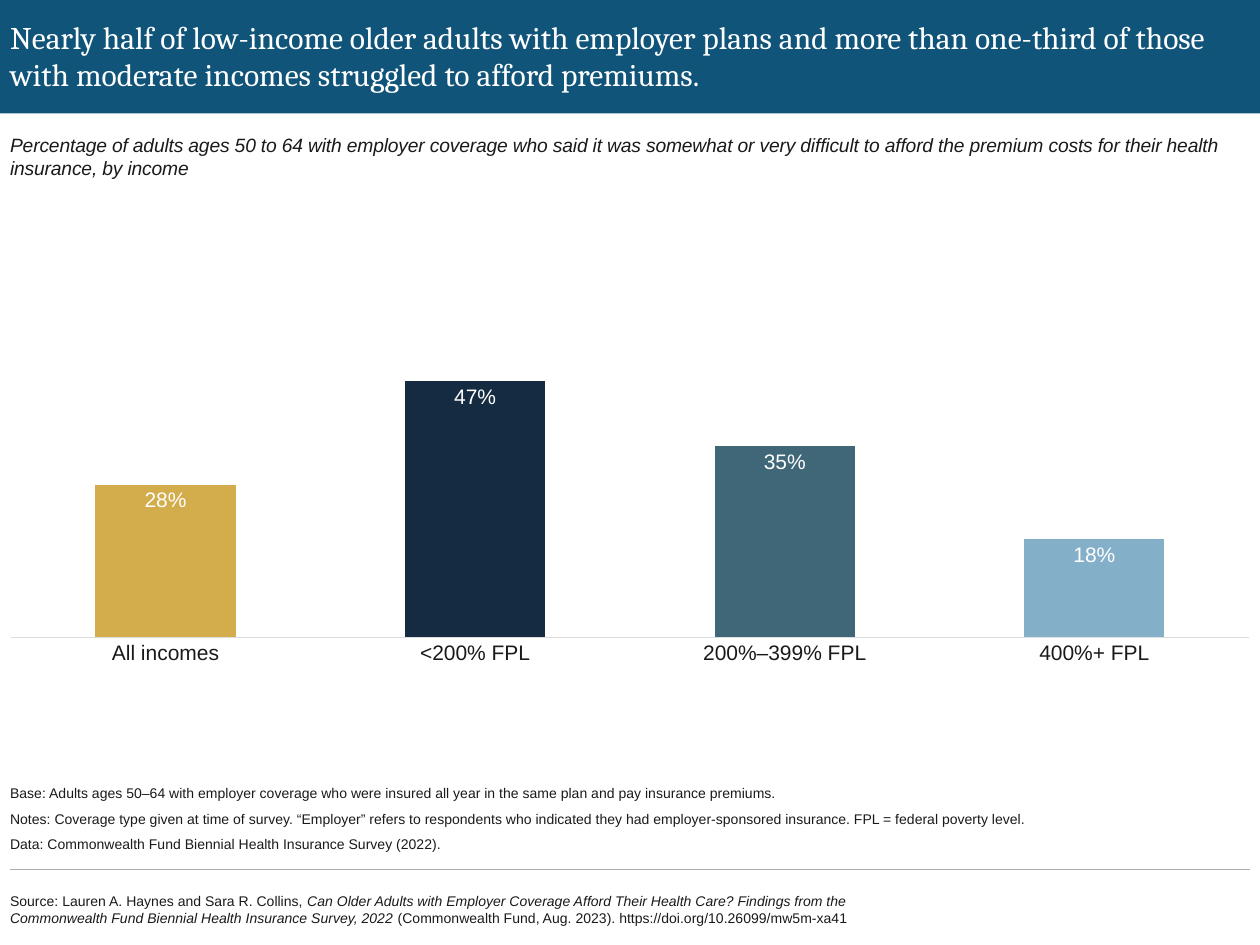
from typing import NamedTuple

from lxml import etree
from pptx import Presentation
from pptx.chart.data import CategoryChartData
from pptx.dml.color import RGBColor
from pptx.enum.chart import XL_CHART_TYPE, XL_LABEL_POSITION, XL_TICK_MARK
from pptx.enum.shapes import MSO_CONNECTOR, MSO_SHAPE
from pptx.enum.text import MSO_ANCHOR, MSO_AUTO_SIZE, PP_ALIGN
from pptx.oxml import parse_xml
from pptx.oxml.ns import nsdecls, qn
from pptx.util import Inches, Pt

COLUMN = XL_CHART_TYPE.COLUMN_CLUSTERED
INSIDE_END = XL_LABEL_POSITION.INSIDE_END
NO_TICK = XL_TICK_MARK.NONE
TOP, MIDDLE, BOTTOM = MSO_ANCHOR.TOP, MSO_ANCHOR.MIDDLE, MSO_ANCHOR.BOTTOM

BLUE = RGBColor(0x11, 0x54, 0x79)
WHITE = RGBColor(0xFF, 0xFF, 0xFF)
INK = RGBColor(0x1A, 0x1A, 0x1A)
RULE_GREY = RGBColor(0xAB, 0xAB, 0xAB)
AXIS_GREY = RGBColor(0xDD, 0xDD, 0xDD)
SANS, SERIF = "Arial", "Cambria"
LEFT, WIDTH = Inches(0.08), Inches(9.84)


class Bar(NamedTuple):
    income: str
    share: float
    color: RGBColor


BARS = [
    Bar("All incomes", 0.28, RGBColor(0xD3, 0xAC, 0x4C)),
    Bar("<200% FPL", 0.47, RGBColor(0x14, 0x2B, 0x41)),
    Bar("200%–399% FPL", 0.35, RGBColor(0x3F, 0x67, 0x77)),
    Bar("400%+ FPL", 0.18, RGBColor(0x83, 0xB0, 0xC8)),
]
TITLE = ("Nearly half of low-income older adults with employer plans and more than "
         "one-third of those with moderate incomes struggled to afford premiums.")
SUBTITLE = ("Percentage of adults ages 50 to 64 with employer coverage who said it was somewhat "
            "or very difficult to afford the premium costs for their health insurance, by income")
NOTES = [
    "Base: Adults ages 50–64 with employer coverage who were insured all year in the same plan "
    "and pay insurance premiums.",
    "Notes: Coverage type given at time of survey. “Employer” refers to respondents who indicated "
    "they had employer-sponsored insurance. FPL = federal poverty level.",
    "Data: Commonwealth Fund Biennial Health Insurance Survey (2022).",
]


def set_font(font, name: str, size: float, color: RGBColor, italic: bool | None = None) -> None:
    font.name, font.size, font.bold, font.italic = name, Pt(size), False, italic
    font.color.rgb = color


def set_frame(sp, top: float, height: float, anchor, width=WIDTH):
    """Place a text shape at the left margin and clear its insets."""
    sp.left, sp.top, sp.width, sp.height = LEFT, Inches(top), width, Inches(height)
    tf = sp.text_frame
    tf.margin_left = tf.margin_top = tf.margin_right = tf.margin_bottom = 0
    tf.word_wrap, tf.auto_size, tf.vertical_anchor = True, MSO_AUTO_SIZE.NONE, anchor
    return tf


def fill_paragraphs(tf, texts: list[str], name: str, size: float, color: RGBColor,
                    italic: bool | None = None, after: float = 0, spacing: float = 1.0) -> None:
    tf.text = "\n".join(texts)
    for p in tf.paragraphs:
        p.alignment = PP_ALIGN.LEFT
        p.space_before, p.space_after, p.line_spacing = Pt(0), Pt(after), spacing
        set_font(p.font, name, size, color, italic)


def add_band(s) -> None:
    sp = s.shapes.add_shape(MSO_SHAPE.RECTANGLE, 0, 0, Inches(10), Inches(0.9))
    sp.shadow.inherit = False
    sp.fill.solid()
    sp.fill.fore_color.rgb = BLUE
    sp.line.fill.background()
    s.shapes.element.insert(2, sp.element)  # behind the title


def add_rule(s) -> None:
    y = Inches(6.9)
    line = s.shapes.add_connector(MSO_CONNECTOR.STRAIGHT, LEFT, y, LEFT + WIDTH, y)
    line.line.color.rgb, line.line.width = RULE_GREY, Pt(0.75)
    etree.SubElement(line.element.spPr, qn("a:effectLst"))


def add_source(s) -> None:
    tf = set_frame(s.shapes.add_textbox(0, 0, 0, 0), 6.99, 0.46, MIDDLE, Inches(7.8))
    p = tf.paragraphs[0]
    set_font(p.font, SANS, 8, INK)
    p.add_run().text = "Source: Lauren A. Haynes and Sara R. Collins, "
    first, second = ("Can Older Adults with Employer Coverage Afford Their Health Care? Findings from the ",
                     "Commonwealth Fund Biennial Health Insurance Survey, 2022")
    for text in (first, second):
        if text is second:
            p.add_line_break()
        r = p.add_run()
        r.text, r.font.italic = text, True
    p.add_run().text = " (Commonwealth Fund, Aug. 2023). https://doi.org/10.26099/mw5m-xa41"


def add_bar_chart(s, bars: list[Bar]) -> None:
    data = CategoryChartData(number_format="0%")
    data.categories = [bar.income for bar in bars]
    data.add_series("Series 1", [bar.share for bar in bars])
    chart = s.shapes.add_chart(COLUMN, LEFT, Inches(1.38), WIDTH, Inches(4), data).chart
    chart.has_legend = chart.has_title = False
    set_font(chart.font, SANS, 10, INK)

    # Axes
    axis = chart.category_axis
    axis.major_tick_mark = axis.minor_tick_mark = NO_TICK
    set_font(axis.tick_labels.font, SANS, 12, INK)
    axis.format.line.color.rgb, axis.format.line.width = AXIS_GREY, Pt(0.75)
    values = chart.value_axis
    values.minimum_scale, values.maximum_scale = 0, 0.85
    values.has_major_gridlines = values.visible = False

    # Bars and their labels
    plot = chart.plots[0]
    plot.gap_width, plot.vary_by_categories = 121, False
    series = plot.series[0]
    series.format.fill.solid()
    series.format.fill.fore_color.rgb = BLUE
    for i, bar in enumerate(bars):
        fill = series.points[i].format.fill
        fill.solid()
        fill.fore_color.rgb = bar.color
    labels = series.data_labels
    labels.show_value, labels.position = True, INSIDE_END
    labels.number_format, labels.number_format_is_linked = "0%", False
    set_font(labels.font, SANS, 12, WHITE)

    # Plot area spans the full chart width
    area = chart.element.find(".//" + qn("c:plotArea"))
    for old in area.findall(qn("c:layout")):
        area.remove(old)
    area.insert(0, parse_xml(
        f'<c:layout {nsdecls("c")}><c:manualLayout><c:layoutTarget val="inner"/>'
        '<c:xMode val="edge"/><c:yMode val="edge"/><c:x val="0"/><c:y val="0"/>'
        '<c:w val="1"/><c:h val="0.92"/></c:manualLayout></c:layout>'))


def main() -> None:
    prs = Presentation()
    prs.slide_width, prs.slide_height = Inches(10), Inches(7.5)
    s = prs.slides.add_slide(prs.slide_layouts.get_by_name("Comparison"))
    holders = {ph.placeholder_format.idx: ph for ph in s.placeholders}
    title, subtitle, notes = holders[0], holders[1], holders[3]
    for idx in (2, 4):  # unused content placeholders
        s.shapes.element.remove(holders[idx].element)

    # Heading
    add_band(s)
    fill_paragraphs(set_frame(title, -0.01, 0.9, MIDDLE), [TITLE], SERIF, 18, WHITE)
    tf = set_frame(subtitle, 1.06, 0.32, TOP)
    fill_paragraphs(tf, [SUBTITLE], SANS, 11, INK, italic=True)
    tf.paragraphs[0].runs[0].font._element.set("spc", "-10")

    add_bar_chart(s, BARS)

    # Footer
    fill_paragraphs(set_frame(notes, 6.23, 0.54, BOTTOM), NOTES, SANS, 8, INK,
                    after=6, spacing=0.9)
    add_rule(s)
    add_source(s)
    prs.save("out.pptx")


if __name__ == "__main__":
    main()
